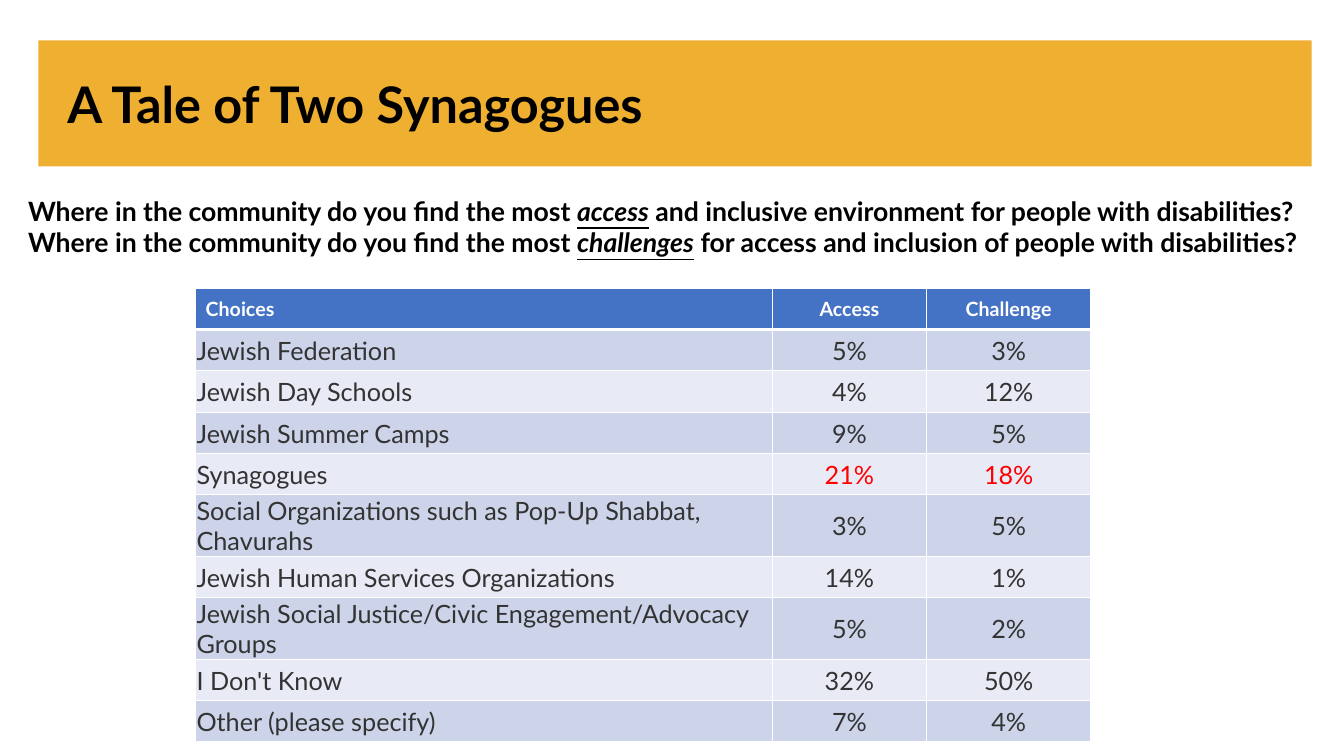
from dataclasses import dataclass
from typing import Any

import pptx
import pptx.dml.color
import pptx.enum.shapes
import pptx.enum.text
import pptx.oxml
import pptx.oxml.ns
import pptx.util

Inches = pptx.util.Inches
Pt = pptx.util.Pt
LEFT = pptx.enum.text.PP_ALIGN.LEFT
CENTER = pptx.enum.text.PP_ALIGN.CENTER
MIDDLE = pptx.enum.text.MSO_ANCHOR.MIDDLE

GOLD, BLUE, WHITE, BLACK = "EFAF30", "4472C4", "FFFFFF", "000000"
GREY, RED = "333333", "FF0000"
BANDS = ("CDD4EA", "E8EBF5")
COLUMN_WIDTHS = (5.72, 1.53, 1.63)
ROW_HEIGHT = 0.41


@dataclass(frozen=True)
class Choice:
    name: str
    access: int
    challenge: int
    highlighted: bool = False


@dataclass(frozen=True)
class Question:
    start: str
    emphasis: str
    end: str


@dataclass(frozen=True)
class CellStyle:
    fill: str
    color: str
    size: int
    bold: bool
    margins: tuple[float, float, float, float]
    bottom_border: int


QUESTIONS = (
    Question("Where in the community do you find the most ", "access",
             " and inclusive environment for people with disabilities?"),
    Question("Where in the community do you find the most ", "challenges",
             " for access and inclusion of people with disabilities?"),
)
CHOICES = (
    Choice("Jewish Federation", 5, 3),
    Choice("Jewish Day Schools", 4, 12),
    Choice("Jewish Summer Camps", 9, 5),
    Choice("Synagogues", 21, 18, highlighted=True),
    Choice("Social Organizations such as Pop-Up Shabbat, Chavurahs", 3, 5),
    Choice("Jewish Human Services Organizations", 14, 1),
    Choice("Jewish Social Justice/Civic Engagement/Advocacy Groups", 5, 2),
    Choice("I Don't Know", 32, 50),
    Choice("Other (please specify)", 7, 4),
)


def rgb(color: str) -> pptx.dml.color.RGBColor:
    return pptx.dml.color.RGBColor.from_string(color)


def add_span(para: Any, text: str, color: str, **formats: Any) -> None:
    span = para.add_run()
    span.text = text
    span.font.color.rgb = rgb(color)
    for name, value in ({"name": "Lato"} | formats).items():
        setattr(span.font, name, value)


def add_banner(page: Any) -> None:
    banner = page.shapes.add_shape(
        pptx.enum.shapes.MSO_SHAPE.RECTANGLE,
        Inches(0.38), Inches(0.4), Inches(12.63), Inches(1.25))
    banner.shadow.inherit = False
    banner.fill.solid()
    banner.fill.fore_color.rgb = rgb(GOLD)
    banner.line.fill.background()


def add_title(page: Any) -> None:
    box = page.shapes.add_textbox(Inches(0.57), Inches(0.4), Inches(11.62), Inches(1.25))
    box.text_frame.word_wrap = True
    box.text_frame.vertical_anchor = MIDDLE
    add_span(box.text_frame.paragraphs[0], "A Tale of Two Synagogues", BLACK,
             size=Pt(36), bold=True)


def add_questions(page: Any) -> None:
    box = page.shapes.add_textbox(Inches(0.18), Inches(1.88), Inches(12.98), Inches(0.74))
    frame = box.text_frame
    frame.word_wrap = True
    for index, question in enumerate(QUESTIONS):
        para = frame.add_paragraph() if index else frame.paragraphs[0]
        formats = {"size": Pt(19), "bold": True}
        add_span(para, question.start, BLACK, **formats)
        add_span(para, question.emphasis, BLACK, italic=True, underline=True, **formats)
        add_span(para, question.end, BLACK, **formats)


def add_borders(cell: Any, bottom: int) -> None:
    """Draw white lines on all sides; call before the cell is filled."""
    properties = cell._tc.get_or_add_tcPr()
    for side, width in (("L", 1), ("R", 1), ("T", 1), ("B", bottom)):
        properties.append(pptx.oxml.parse_xml(
            f'<a:ln{side} {pptx.oxml.ns.nsdecls("a")} w="{Pt(width)}"><a:solidFill>'
            f'<a:srgbClr val="{WHITE}"/></a:solidFill></a:ln{side}>'))


def fill_cell(cell: Any, text: str, align: Any, color: str, style: CellStyle) -> None:
    add_borders(cell, style.bottom_border)
    cell.fill.solid()
    cell.fill.fore_color.rgb = rgb(style.fill)
    cell.vertical_anchor = MIDDLE
    for side, margin in zip(("left", "top", "right", "bottom"), style.margins):
        setattr(cell, f"margin_{side}", Inches(margin))
    para = cell.text_frame.paragraphs[0]
    para.alignment = align
    add_span(para, text, color, size=Pt(style.size), bold=style.bold)


def fill_row(table: Any, row: int, texts: tuple[str, ...], style: CellStyle,
             value_color: str) -> None:
    for column, text in enumerate(texts):
        fill_cell(table.cell(row, column), text, CENTER if column else LEFT,
                  value_color if column else style.color, style)


def add_results(page: Any) -> None:
    row_count = len(CHOICES) + 1
    table = page.shapes.add_table(
        row_count, len(COLUMN_WIDTHS), Inches(1.94), Inches(2.86),
        Inches(sum(COLUMN_WIDTHS)), Inches(row_count * ROW_HEIGHT)).table
    for column, width in zip(table.columns, COLUMN_WIDTHS):
        column.width = Inches(width)
    for row in table.rows:
        row.height = Inches(ROW_HEIGHT)
    header = CellStyle(BLUE, WHITE, 14, True, (0.1, 0.05, 0.1, 0.05), 3)
    fill_row(table, 0, ("Choices", "Access", "Challenge"), header, WHITE)
    for index, choice in enumerate(CHOICES):
        body = CellStyle(BANDS[index % 2], GREY, 18, False, (0.01, 0.01, 0.01, 0), 1)
        texts = (choice.name, f"{choice.access}%", f"{choice.challenge}%")
        fill_row(table, index + 1, texts, body, RED if choice.highlighted else GREY)


def main() -> None:
    deck = pptx.Presentation()
    deck.slide_width, deck.slide_height = Inches(13.33), Inches(7.5)
    page = deck.slides.add_slide(deck.slide_layouts[6])
    add_banner(page)
    add_title(page)
    add_questions(page)
    add_results(page)
    deck.save("out.pptx")


if __name__ == "__main__":
    main()
